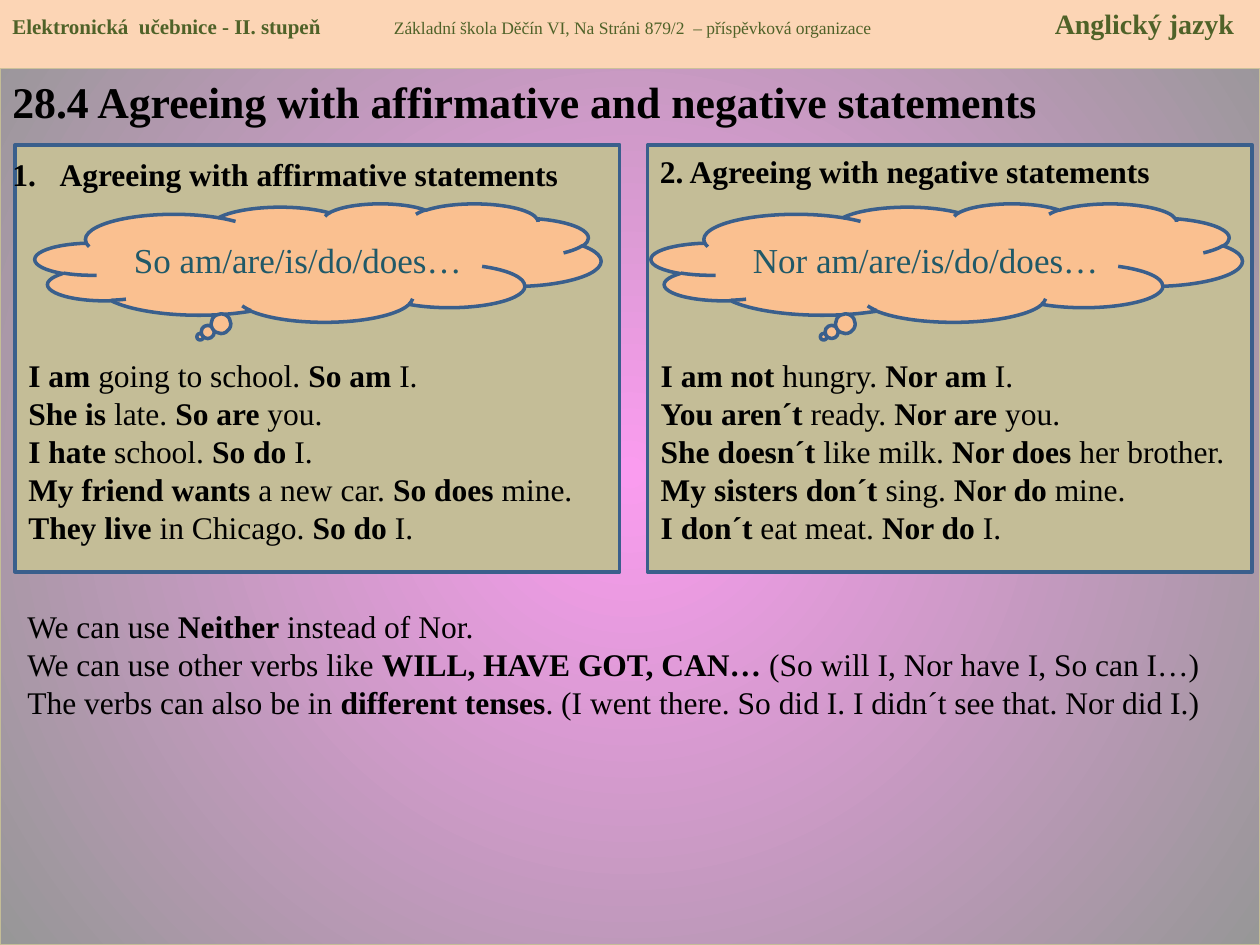
from pptx import Presentation
from pptx.dml.color import RGBColor
from pptx.enum.shapes import MSO_SHAPE
from pptx.enum.text import MSO_ANCHOR, PP_ALIGN
from pptx.oxml import parse_xml
from pptx.oxml.ns import nsdecls, qn
from pptx.util import Pt

RECT = MSO_SHAPE.RECTANGLE
CLOUD = MSO_SHAPE.CLOUD_CALLOUT
TOP, MIDDLE = MSO_ANCHOR.TOP, MSO_ANCHOR.MIDDLE
LEFT, CENTER = PP_ALIGN.LEFT, PP_ALIGN.CENTER
FACE = "Times New Roman"
BLACK, BLUE, SAND, GREEN = "000000", "3A5F8C", "C4BD97", "4F6228"

AGREE = [
    "*I am *going to school. *So am *I.",
    "*She is* late. *So are *you.",
    "*I hate *school. *So do *I.",
    "*My friend wants *a new car. *So does *mine.",
    "*They live *in Chicago. *So do *I.",
]
DENY = [
    "*I am not *hungry. *Nor am *I.",
    "*You aren´t *ready. *Nor are *you.",
    "*She doesn´t *like milk. *Nor does *her brother.",
    "*My sisters don´t *sing. *Nor do *mine.",
    "*I don´t *eat meat. *Nor do *I.",
]
NOTES = [
    "We can use *Neither* instead of Nor.",
    "We can use other verbs like *WILL, HAVE GOT, CAN…* (So will I, Nor have I, So can I…)",
    "The verbs can also be in *different tenses*. (I went there. So did I. I didn´t see that. Nor did I.)",
]


def color(code):
    return RGBColor.from_string(code)


def style(para, size, code=BLACK, bold=None, align=LEFT):
    para.alignment = align
    font = para.font
    font.name, font.size, font.bold = FACE, Pt(size), bold
    font.color.rgb = color(code)


def add_runs(para, text):
    for i, part in enumerate(text.split("*")):
        if part:
            run = para.add_run()
            run.text = part
            run.font.bold = i % 2 == 1


def add_shape(slide, kind, box, fill=None, line=None, width=2):
    shape = slide.shapes.add_shape(kind, *map(Pt, box))
    shape.shadow.inherit = False
    if fill:
        shape.fill.solid()
        shape.fill.fore_color.rgb = color(fill)
    else:
        shape.fill.background()
    if line:
        shape.line.color.rgb = color(line)
        shape.line.width = Pt(width)
    else:
        shape.line.fill.background()
    return shape


def add_lines(slide, box, lines):
    frame = slide.shapes.add_textbox(*map(Pt, box)).text_frame
    frame.word_wrap = True
    for i, line in enumerate(lines):
        para = frame.add_paragraph() if i else frame.paragraphs[0]
        style(para, 18)
        add_runs(para, line)


def add_back(slide):
    fill = slide.background.fill
    fill.gradient()
    for stop, code in zip(fill.gradient_stops, ("FA9CEF", "979797")):
        stop.color.rgb = color(code)
    fill.gradient_stops[0].position = 0
    fill.gradient_stops[1].position = 1
    old = next(slide.element.iter(qn("a:lin")))
    old.getparent().replace(old, parse_xml(
        f'<a:path {nsdecls("a")} path="circle">'
        '<a:fillToRect l="50000" t="50000" r="50000" b="50000"/></a:path>'))


def add_panel(slide, box, inset, width, phrase, lines, span):
    x, y, w, h = box
    add_shape(slide, RECT, box, SAND, BLUE)
    cloud = add_shape(slide, CLOUD, (x + inset, y + 33.5, width, 67.7), "FAC090", BLUE)
    cloud.text_frame.vertical_anchor = MIDDLE
    para = cloud.text_frame.paragraphs[0]
    para.text = phrase
    style(para, 20, "215968", align=CENTER)
    add_lines(slide, (x + 0.5, y + 117.3, span, 116.6), lines)


def add_body(slide, box):
    frame = add_shape(slide, RECT, box, None, SAND, 0.75).text_frame
    frame.vertical_anchor = TOP
    title = frame.paragraphs[0]
    title.text = "28.4 Agreeing with affirmative and negative statements"
    style(title, 25, bold=True)
    head = frame.add_paragraph()
    head.text = "Agreeing with affirmative statements"
    head.space_before = Pt(16)
    props = head._p.get_or_add_pPr()
    props.set("marL", str(Pt(27)))
    props.set("indent", str(Pt(-27)))
    props.append(parse_xml(f'<a:buFont {nsdecls("a")} typeface="+mj-lt"/>'))
    props.append(parse_xml(f'<a:buAutoNum {nsdecls("a")} type="arabicPeriod"/>'))
    style(head, 18, bold=True)


def add_header(slide, box):
    frame = add_shape(slide, RECT, box, "FCD5B5").text_frame
    frame.vertical_anchor = TOP
    para = frame.paragraphs[0]
    para._p.get_or_add_pPr().append(parse_xml(
        f'<a:tabLst {nsdecls("a")}><a:tab pos="{Pt(218)}" algn="l"/>'
        f'<a:tab pos="{Pt(595.7)}" algn="l"/></a:tabLst>'))
    style(para, 12, GREEN)
    for text, size, bold in (
        ("Elektronická  učebnice - II. stupeň\t", 12, True),
        ("Základní škola Děčín VI, Na Stráni 879/2  – příspěvková organizace\t", 10, False),
        ("Anglický jazyk", 16, True),
    ):
        run = para.add_run()
        run.text = text
        run.font.size, run.font.bold = Pt(size), bold


def main():
    deck = Presentation()
    deck.slide_width, deck.slide_height = Pt(720), Pt(540)
    slide = deck.slides.add_slide(deck.slide_layouts[6])
    add_back(slide)
    add_panel(slide, (8.6, 82.8, 345.6, 244), 11.5, 323.3,
              "So am/are/is/do/does…", AGREE, 471)
    add_panel(slide, (370, 82.8, 345.6, 244), 2.2, 337.7,
              "Nor am/are/is/do/does…", DENY, 338)
    add_body(slide, (0, 39, 720, 501))
    add_header(slide, (0, 0, 720, 39))
    add_lines(slide, (370, 83.5, 338, 51), ["*2. Agreeing with negative statements*"])
    add_lines(slide, (8.6, 343.5, 697, 94.3), NOTES)
    deck.save("out.pptx")


if __name__ == "__main__":
    main()
